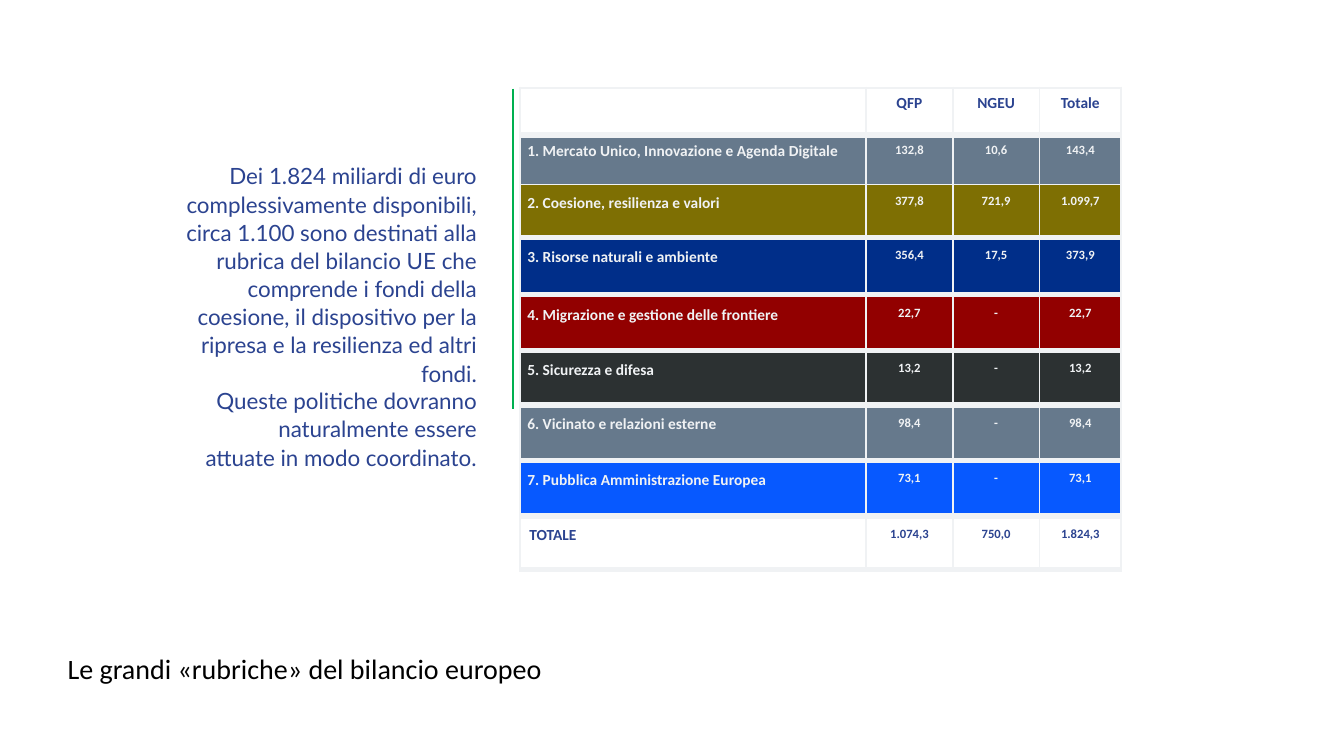
from lxml import etree
from pptx import Presentation
from pptx.dml.color import RGBColor
from pptx.enum.shapes import MSO_CONNECTOR
from pptx.enum.text import MSO_ANCHOR, MSO_AUTO_SIZE, PP_ALIGN
from pptx.oxml.ns import qn
from pptx.util import Inches, Pt

LEFT, CENTER, RIGHT = PP_ALIGN.LEFT, PP_ALIGN.CENTER, PP_ALIGN.RIGHT
MIDDLE, GROW = MSO_ANCHOR.MIDDLE, MSO_AUTO_SIZE.SHAPE_TO_FIT_TEXT
STRAIGHT = MSO_CONNECTOR.STRAIGHT

BLACK = RGBColor(0x00, 0x00, 0x00)
BLUE = RGBColor(0x2B, 0x43, 0x90)
PALE = RGBColor(0xF0, 0xF2, 0xF4)
GREEN = RGBColor(0x00, 0xB0, 0x50)
SLATE = RGBColor(0x66, 0x79, 0x8C)
OLIVE = RGBColor(0x7E, 0x6F, 0x03)
NAVY = RGBColor(0x00, 0x2E, 0x89)
RED = RGBColor(0x92, 0x00, 0x00)
COAL = RGBColor(0x2C, 0x31, 0x32)
AZURE = RGBColor(0x07, 0x59, 0xFF)

TITLE = "Le grandi «rubriche» del bilancio europeo"
# text, left indent, first-line indent, line spacing
NOTES = [
    ("Dei 1.824 miliardi di euro complessivamente disponibili, circa 1.100 sono "
     "destinati alla rubrica del bilancio UE che comprende i fondi della coesione, "
     "il dispositivo per la ripresa e la resilienza ed altri fondi.", 0.04, 0.15, 1.05),
    ("Queste politiche dovranno", 0, 0, 1),
    ("naturalmente essere attuate in modo coordinato.", 0.01, 0.44, 1.07),
]
# height, top margin, fill, cell texts
ROWS = [
    (0.47, 0.06, None, ("", "QFP", "NGEU", "Totale")),
    (0.49, 0.07, SLATE, ("1. Mercato Unico, Innovazione e Agenda Digitale",
                         "132,8", "10,6", "143,4")),
    (0.53, 0.09, OLIVE, ("2. Coesione, resilienza e valori", "377,8", "721,9", "1.099,7")),
    (0.56, 0.1, NAVY, ("3. Risorse naturali e ambiente", "356,4", "17,5", "373,9")),
    (0.56, 0.11, RED, ("4. Migrazione e gestione delle frontiere", "22,7", "-", "22,7")),
    (0.54, 0.1, COAL, ("5. Sicurezza e difesa", "13,2", "-", "13,2")),
    (0.55, 0.1, SLATE, ("6. Vicinato e relazioni esterne", "98,4", "-", "98,4")),
    (0.55, 0.1, AZURE, ("7. Pubblica Amministrazione Europea", "73,1", "-", "73,1")),
    (0.53, 0.1, None, ("TOTALE", "1.074,3", "750,0", "1.824,3")),
]
COLS = (3.43, 0.86, 0.86, 0.81)
THIN, THICK = 1.5, 4.25
# weight of each horizontal rule, from top to bottom
RULES = [THIN, THICK, THIN] + [THICK] * (len(ROWS) - 2)


def style(par, font, size, color, align, bold=False):
    par.alignment = align
    for run in par.runs:
        run.font.name, run.font.size = font, Pt(size)
        run.font.color.rgb, run.font.bold = color, bold


def indent(par, left, first=0):
    props = par._p.get_or_add_pPr()
    props.set("marL", str(Inches(left)))
    props.set("indent", str(Inches(first)))


def inset(box, top):
    box.margin_left = box.margin_right = box.margin_bottom = 0
    box.margin_top = Inches(top)


def border(cell, top, bottom):
    props = cell._tc.get_or_add_tcPr()
    sides = (("L", THIN), ("R", THIN), ("T", top), ("B", bottom))
    for pos, (side, width) in enumerate(sides):
        line = etree.Element(qn("a:ln" + side), w=str(Pt(width)))
        fill = etree.SubElement(line, qn("a:solidFill"))
        etree.SubElement(fill, qn("a:srgbClr"), val=str(PALE))
        props.insert(pos, line)


def add_notes(slide):
    box = slide.shapes.add_textbox(Inches(1.58), Inches(1.59), Inches(3.15), Inches(2.83))
    frame = box.text_frame
    frame.word_wrap, frame.auto_size = True, GROW
    inset(frame, 0.01)
    frame.text = "\n".join(note[0] for note in NOTES)
    for par, (_, left, first, space) in zip(frame.paragraphs, NOTES):
        indent(par, left, first)
        par.line_spacing = space
        style(par, "Lato", 16, BLUE, RIGHT)


def add_budget(slide):
    table = slide.shapes.add_table(len(ROWS), len(COLS), Inches(5.16), Inches(0.87),
                                   Inches(sum(COLS)), Inches(4.78)).table
    table.first_row = table.horz_banding = False
    for col, width in zip(table.columns, COLS):
        col.width = Inches(width)
    for r, (height, top, color, texts) in enumerate(ROWS):
        table.rows[r].height = Inches(height)
        for c, text in enumerate(texts):
            cell = table.cell(r, c)
            inset(cell, top)
            cell.text = text
            if color is None:
                cell.fill.background()
            else:
                cell.fill.solid()
                cell.fill.fore_color.rgb = color
            border(cell, RULES[r], RULES[r + 1])
            par = cell.text_frame.paragraphs[0]
            if c == 0:
                indent(par, 0.07 if color else 0.09)
            size = 11 if r == 0 or c == 0 else 9
            style(par, "Calibri", size, PALE if color else BLUE,
                  CENTER if c else LEFT, True)


def add_title(slide):
    title = slide.shapes.title
    title.left, title.top = Inches(0.66), Inches(6.45)
    title.width, title.height = Inches(8.48), Inches(0.35)
    frame = title.text_frame
    frame.text = TITLE
    frame.vertical_anchor, frame.auto_size = MIDDLE, GROW
    inset(frame, 0.01)
    indent(frame.paragraphs[0], 0.01)
    style(frame.paragraphs[0], "Calibri", 20, BLACK, LEFT)


def add_bar(slide):
    bar = slide.shapes.add_connector(STRAIGHT, Inches(5.09), Inches(0.88),
                                     Inches(5.09), Inches(4.06))
    bar.line.color.rgb, bar.line.width = GREEN, Pt(1.25)
    etree.SubElement(bar._element.spPr, qn("a:effectLst"))


def main():
    deck = Presentation()
    deck.slide_width, deck.slide_height = Inches(13.33), Inches(7.5)
    slide = deck.slides.add_slide(deck.slide_layouts[5])
    add_notes(slide)
    add_budget(slide)
    add_title(slide)
    add_bar(slide)
    deck.save("out.pptx")


if __name__ == "__main__":
    main()
